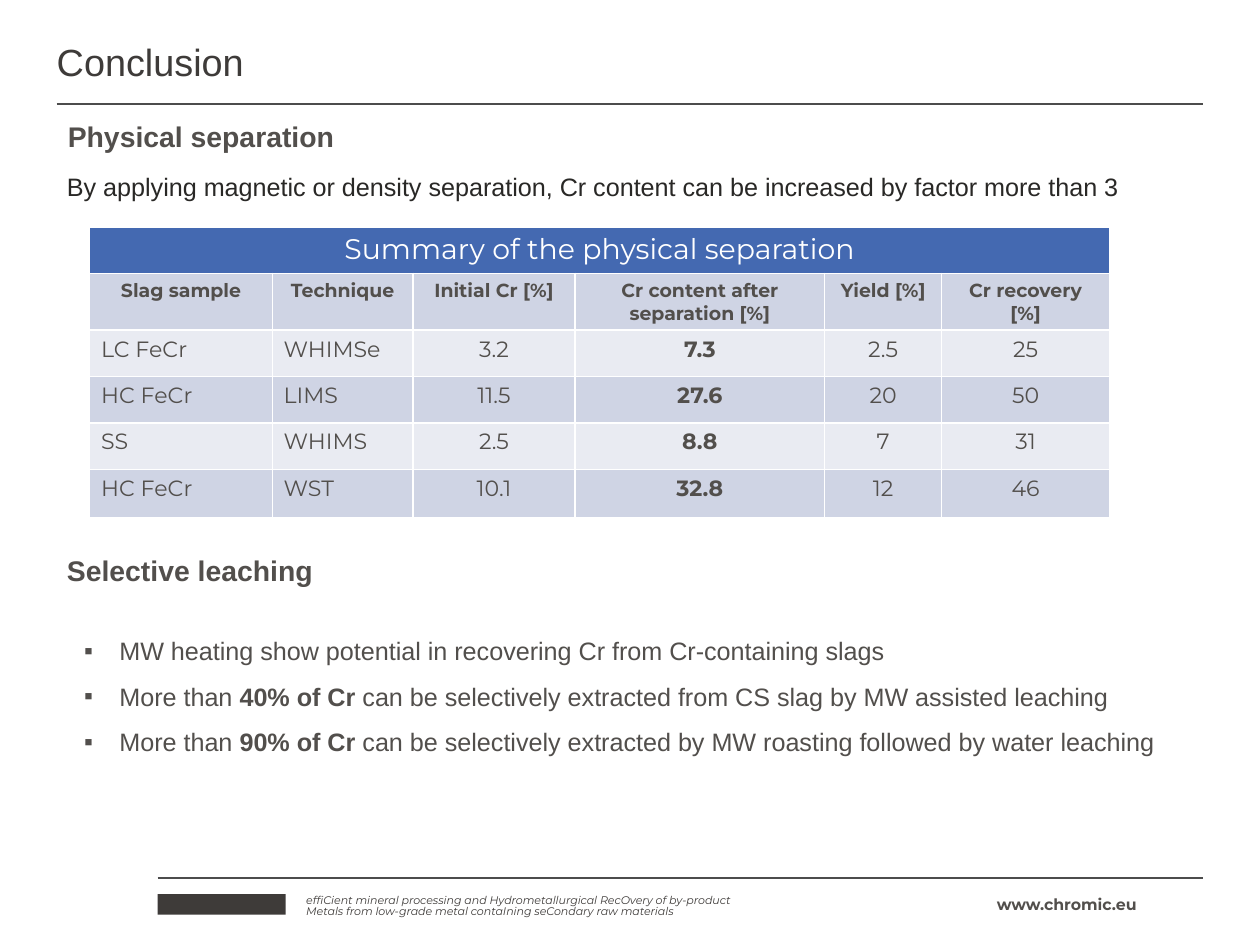
from lxml import etree
from pptx import Presentation
from pptx import util as u
from pptx.dml.color import RGBColor
from pptx.enum import shapes, text
from pptx.oxml.ns import qn

# Content
TITLE = "Conclusion"
TEXTS = [  # text, left, top, width, height (cm), size, colour, bold
    ("Physical separation", 1.27, 2.54, 17.7, 1.02, 18, "524F4C", True),
    ("By applying magnetic or density separation, Cr content can be "
     "increased by factor more than 3",
     1.25, 3.71, 25.78, 0.94, 16, "292826", False),
    ("Selective leaching", 1.25, 12.27, 7.57, 1.02, 18, "524F4C", True),
]
TABLE_TITLE = "Summary of the physical separation"
ROWS = [
    ("Slag sample", "Technique", "Initial Cr [%]",
     "Cr content after separation [%]", "Yield [%]", "Cr recovery [%]"),
    ("LC FeCr", "WHIMSe", "3.2", "7.3", "2.5", "25"),
    ("HC FeCr", "LIMS", "11.5", "27.6", "20", "50"),
    ("SS", "WHIMS", "2.5", "8.8", "7", "31"),
    ("HC FeCr", "WST", "10.1", "32.8", "12", "46"),
]
COL_WIDTHS = [4.09, 3.15, 3.63, 5.59, 2.62, 3.76]
ROW_HEIGHTS = [1.04, 1.22, 1.04, 1.04, 1.04, 1.09]
RESULT_COL = 3
BULLETS = [  # runs of (text, bold)
    [("MW heating show potential in recovering Cr from Cr-containing slags", False)],
    [("More than ", False), ("40% of Cr ", True),
     ("can be selectively extracted from CS slag by MW assisted leaching", False)],
    [("More than ", False), ("90% of Cr ", True),
     ("can be selectively extracted by MW roasting followed by water leaching", False)],
]
MOTTO = ["effiCient mineral processing and Hydrometallurgical RecOvery of by-product",
         "Metals from low-grade metal contaIning seCondary raw materials"]
SITE = "www.chromic.eu"
RULES = [(1.27, 2.33), (3.53, 19.66)]  # left, y
RULE_RIGHT = 26.95
GREY, DARK = "524F4C", "3E3B39"


def rgb(color):
    return RGBColor.from_string(color)


def add_run(p, words, size, color, font="Arial", bold=False, italic=False):
    r = p.add_run()
    r.text = words
    f = r.font
    f.name, f.size, f.bold, f.italic = font, u.Pt(size), bold, italic
    f.color.rgb = rgb(color)


def place(sp, *box):
    sp.left, sp.top, sp.width, sp.height = map(u.Cm, box)


def add_box(s, *box, inset=True):
    tf = s.shapes.add_textbox(*map(u.Cm, box)).text_frame
    tf.word_wrap = True
    if not inset:
        tf.margin_left = tf.margin_top = tf.margin_right = tf.margin_bottom = 0
    return tf


def set_bullet(p, indent):
    pPr = p._p.get_or_add_pPr()
    pPr.set("marL", str(u.Cm(indent)))
    pPr.set("indent", str(-u.Cm(indent)))
    etree.SubElement(pPr, qn("a:buFont")).set("typeface", "Arial")
    etree.SubElement(pPr, qn("a:buChar")).set("char", "▪")


def set_cell(cell, fill):
    tcPr = cell._tc.get_or_add_tcPr()
    for side in "LRTB":
        ln = etree.SubElement(tcPr, qn(f"a:ln{side}"), w=str(u.Pt(1)))
        line_fill = etree.SubElement(ln, qn("a:solidFill"))
        etree.SubElement(line_fill, qn("a:srgbClr"), val="FFFFFF")
    cell.fill.solid()
    cell.fill.fore_color.rgb = rgb(fill)


def add_footer(s):
    mark = s.shapes.add_shape(shapes.MSO_SHAPE.RECTANGLE,
                              *map(u.Cm, (3.53, 20.02, 2.87, 0.46)))
    mark.shadow.inherit = False
    mark.fill.solid()
    mark.fill.fore_color.rgb = rgb(DARK)
    mark.line.fill.background()

    p = add_box(s, 6.86, 20.03, 10.4, 0.56, inset=False).paragraphs[0]
    p.line_spacing = u.Pt(7.5)
    for i, line in enumerate(MOTTO):
        if i:
            p.add_line_break()
        add_run(p, line, 7, DARK, "Montserrat", italic=True)
    p = add_box(s, 22.33, 20.04, 3.6, 0.46, inset=False).paragraphs[0]
    add_run(p, SITE, 10, GREY, "Montserrat", bold=True)


def add_results(s):
    table = s.shapes.add_table(
        len(ROW_HEIGHTS), len(COL_WIDTHS), u.Cm(2.01), u.Cm(5.08),
        u.Cm(sum(COL_WIDTHS)), u.Cm(sum(ROW_HEIGHTS))).table
    for col, width in zip(table.columns, COL_WIDTHS):
        col.width = u.Cm(width)
    for row, height in zip(table.rows, ROW_HEIGHTS):
        row.height = u.Cm(height)

    # Title row across all columns
    for cell in table.rows[0].cells:
        set_cell(cell, "4469B1")
    head = table.cell(0, 0)
    head.merge(table.cell(0, len(COL_WIDTHS) - 1))
    p = head.text_frame.paragraphs[0]
    p.alignment = text.PP_ALIGN.CENTER
    add_run(p, TABLE_TITLE, 18, "FFFFFF", "Montserrat")

    # Column heads and values
    for i, row in enumerate(ROWS):
        for j, words in enumerate(row):
            cell = table.cell(i + 1, j)
            set_cell(cell, "E9EBF2" if i % 2 else "CFD4E4")
            p = cell.text_frame.paragraphs[0]
            if i == 0 or j > 1:
                p.alignment = text.PP_ALIGN.CENTER
            add_run(p, words, 14 if i else 12, GREY, "Montserrat",
                    bold=i == 0 or j == RESULT_COL)


def main():
    prs = Presentation()
    prs.slide_width, prs.slide_height = u.Cm(28.22), u.Cm(21.16)
    s = prs.slides.add_slide(prs.slide_layouts[1])
    title, body = s.placeholders

    # Rules above and below the content
    for left, y in RULES:
        rule = s.shapes.add_connector(shapes.MSO_CONNECTOR.STRAIGHT,
                                      *map(u.Cm, (left, y, RULE_RIGHT, y)))
        rule.line.color.rgb = rgb("4C4C4C")
        rule.line.width = u.Pt(0.75)
        etree.SubElement(rule._element.spPr, qn("a:effectLst"))
    add_footer(s)

    # Title
    place(title, 1.27, 0.84, 24.33, 1.09)
    tf = title.text_frame
    tf.margin_left = tf.margin_top = tf.margin_right = tf.margin_bottom = 0
    tf.auto_size = text.MSO_AUTO_SIZE.NONE
    p = tf.paragraphs[0]
    p.alignment = text.PP_ALIGN.LEFT
    add_run(p, TITLE, 24, DARK)

    # Headings, statement and table
    for words, *box, size, color, bold in TEXTS:
        p = add_box(s, *box).paragraphs[0]
        add_run(p, words, size, color, bold=bold)
    add_results(s)

    # Leaching findings
    place(body, 1.63, 13.77, 25.78, 3.23)
    tf = body.text_frame
    tf.auto_size = text.MSO_AUTO_SIZE.NONE
    for i, runs in enumerate(BULLETS):
        p = tf.add_paragraph() if i else tf.paragraphs[0]
        set_bullet(p, 0.79)
        p.line_spacing = 1.5
        p.space_before = u.Pt(0)
        for words, bold in runs:
            add_run(p, words, 16, GREY, bold=bold)

    prs.save("out.pptx")


if __name__ == "__main__":
    main()
